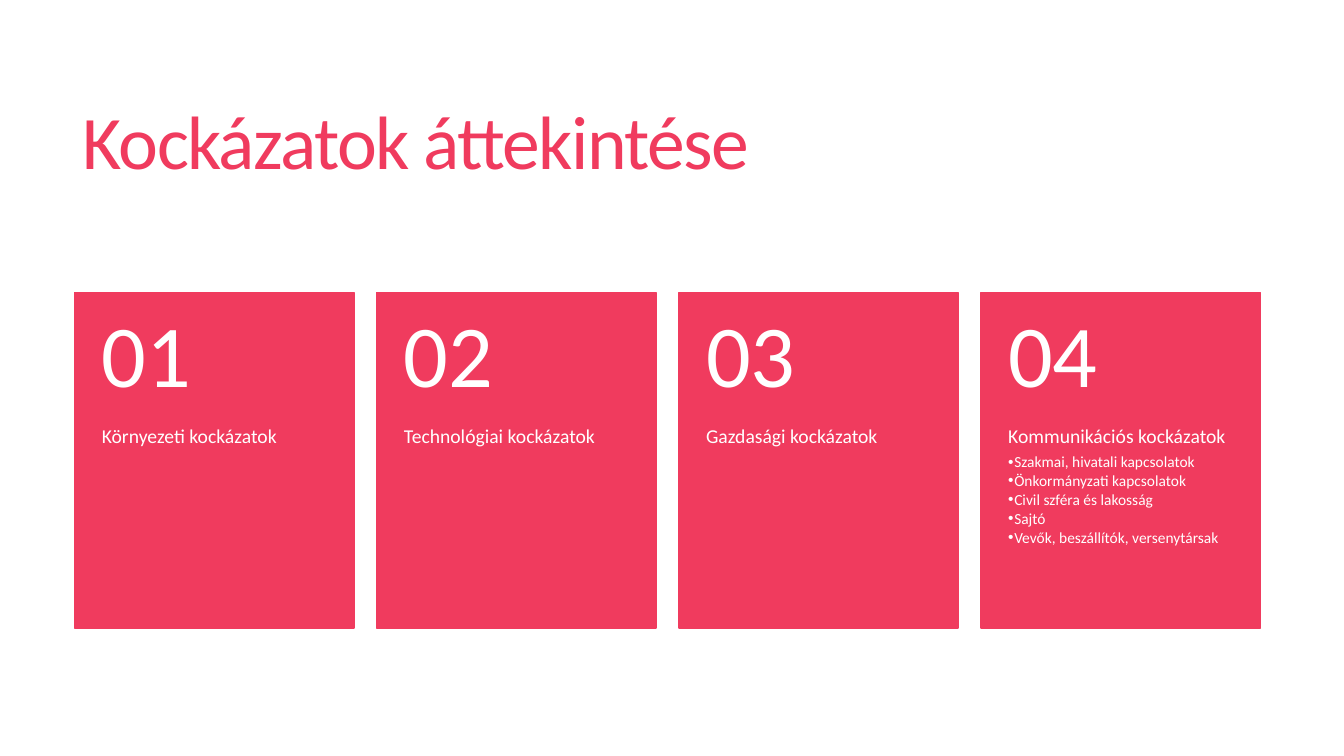
from dataclasses import dataclass

from lxml import etree
from pptx import Presentation
from pptx.dml.color import RGBColor
from pptx.enum.shapes import MSO_SHAPE
from pptx.enum.text import MSO_ANCHOR, MSO_AUTO_SIZE, PP_ALIGN
from pptx.oxml.ns import qn
from pptx.shapes.group import GroupShape
from pptx.text.text import TextFrame
from pptx.util import Inches, Pt

RECT = MSO_SHAPE.RECTANGLE
TOP, MIDDLE = MSO_ANCHOR.TOP, MSO_ANCHOR.MIDDLE
LEFT = PP_ALIGN.LEFT
NO_FIT = MSO_AUTO_SIZE.NONE


@dataclass(frozen=True)
class Theme:
    font: str = "Calibri"
    bullet: str = "Arial"
    red: RGBColor = RGBColor(0xF0, 0x3B, 0x5E)
    white: RGBColor = RGBColor(0xFF, 0xFF, 0xFF)
    title: float = 54
    number: float = 63
    label: float = 14
    item: float = 11


@dataclass(frozen=True)
class Card:
    label: str
    items: tuple[str, ...] = ()


THEME = Theme()
CARDS = (
    Card("Környezeti kockázatok"),
    Card("Technológiai kockázatok"),
    Card("Gazdasági kockázatok"),
    Card("Kommunikációs kockázatok", (
        "Szakmai, hivatali kapcsolatok",
        "Önkormányzati kapcsolatok",
        "Civil szféra és lakosság",
        "Sajtó",
        "Vevők, beszállítók, versenytársak",
    )),
)
START, END = 0.74, 12.5
CARD_TOP, WIDTH, HEIGHT, HEAD = 2.9, 2.77, 3.33, 1.33
PITCH = (END - START - WIDTH) / (len(CARDS) - 1)
PAD, INDENT = 0.27, 0.06


def write(frame: TextFrame, text: str, *, size: float, color: RGBColor = THEME.white,
          line: float = 0.9, after: float = 0, track: float = 0,
          bullet: bool = False, fresh: bool = True) -> None:
    para = frame.paragraphs[0] if fresh else frame.add_paragraph()
    para.alignment = LEFT
    para.line_spacing = line
    para.space_before = Pt(0)
    para.space_after = Pt(after)
    if bullet:
        para.level = 1
        props = para._p.get_or_add_pPr()
        props.set("marL", str(Inches(INDENT)))
        props.set("indent", str(-Inches(INDENT)))
        etree.SubElement(props, qn("a:buFont"), typeface=THEME.bullet)
        etree.SubElement(props, qn("a:buChar"), char="•")
    run = para.add_run()
    run.text = text
    font = run.font
    font.name, font.size, font.color.rgb = THEME.font, Pt(size), color
    if track:
        font._element.set("spc", str(round(track * 100)))


def add_box(group: GroupShape, left: float, top: float, height: float,
            anchor: MSO_ANCHOR, above: float, below: float) -> TextFrame:
    box = group.shapes.add_textbox(Inches(left), Inches(top), Inches(WIDTH), Inches(height))
    frame = box.text_frame
    frame.word_wrap = True
    frame.auto_size = NO_FIT
    frame.vertical_anchor = anchor
    frame.margin_left = frame.margin_right = Inches(PAD)
    frame.margin_top, frame.margin_bottom = Inches(above), Inches(below)
    return frame


def add_card(group: GroupShape, card: Card, index: int) -> None:
    left = START + index * PITCH
    tile = group.shapes.add_shape(RECT, Inches(left), Inches(CARD_TOP), Inches(WIDTH), Inches(HEIGHT))
    tile.shadow.inherit = False
    tile.fill.solid()
    tile.fill.fore_color.rgb = THEME.red
    tile.line.color.rgb = THEME.red
    tile.line.width = Pt(1)

    body = add_box(group, left, CARD_TOP + HEAD, HEIGHT - HEAD, TOP, 0, 0.36)
    write(body, card.label, size=THEME.label, after=THEME.label * 0.35)
    for item in card.items:
        write(body, item, size=THEME.item, after=THEME.item * 0.15, bullet=True, fresh=False)

    head = add_box(group, left, CARD_TOP, HEAD, MIDDLE, 0.18, 0.18)
    write(head, f"{index + 1:02}", size=THEME.number, after=THEME.number * 0.35)


def main() -> None:
    deck = Presentation()
    deck.slide_width, deck.slide_height = Inches(13.33), Inches(7.5)
    slide = deck.slides.add_slide(deck.slide_layouts.get_by_name("Title Only"))
    title = slide.shapes.title
    title.left, title.top = Inches(0.72), Inches(0.55)
    title.width, title.height = Inches(11.78), Inches(1.81)
    frame = title.text_frame
    frame.auto_size = NO_FIT
    frame.vertical_anchor = MIDDLE
    write(frame, "Kockázatok áttekintése", size=THEME.title, color=THEME.red, line=0.85, track=-1.2)

    group = slide.shapes.add_group_shape()
    for index, card in enumerate(CARDS):
        add_card(group, card, index)
    deck.save("out.pptx")


if __name__ == "__main__":
    main()
